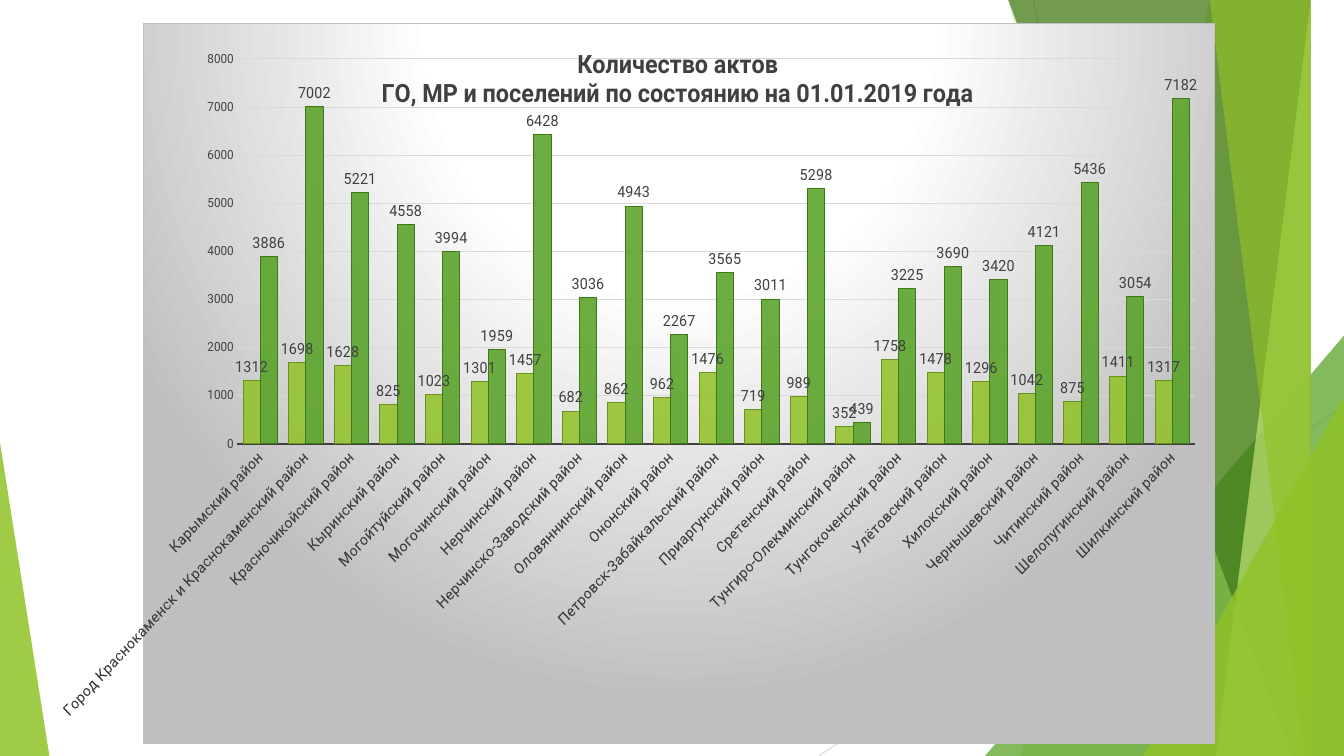
import pptx
import pptx.chart.data
import pptx.dml.color
import pptx.enum.chart
import pptx.enum.shapes
import pptx.oxml
import pptx.oxml.ns
import pptx.util

WIDTH, HEIGHT = 13.33, 7.5
TOP = -0.01
COLORS = {
    "lime": "90C226", "green": "54A021", "forest": "3F7819", "pale": "C0E474",
    "olive": "6C921D", "text": "404040", "silver": "BFBFBF", "grid": "D9D9D9",
    "white": "FFFFFF",
}
RGB = {name: pptx.dml.color.RGBColor.from_string(value) for name, value in COLORS.items()}
qn = pptx.oxml.ns.qn
Inches, Pt = pptx.util.Inches, pptx.util.Pt


def paint(fill, color, opacity):
    fill.solid()
    fill.fore_color.rgb = RGB[color]
    node = fill._xPr.find(".//" + qn("a:srgbClr"))
    pptx.oxml.parse_xml(f'<a:alpha {pptx.oxml.ns.nsdecls("a")} val="{opacity * 1000}"/>')
    node.append(pptx.oxml.parse_xml(
        f'<a:alpha {pptx.oxml.ns.nsdecls("a")} val="{opacity * 1000}"/>'))


def place(parent, index, target, **shares):
    """Give a chart part a fixed place, as shares of the chart's size."""
    for old in parent.findall(qn("c:layout")):
        parent.remove(old)
    modes = "".join(f'<c:{key}Mode val="edge"/>' for key in "xy")
    values = "".join(f'<c:{key} val="{share}"/>' for key, share in shares.items())
    parent.insert(index, pptx.oxml.parse_xml(
        f'<c:layout {pptx.oxml.ns.nsdecls("c")}><c:manualLayout>'
        f'{target}{modes}{values}</c:manualLayout></c:layout>'))


presentation = pptx.Presentation()
presentation.slide_width, presentation.slide_height = Inches(WIDTH), Inches(HEIGHT)
slide = presentation.slides.add_slide(presentation.slide_layouts[6])

# Thin background lines
for x1, y1, x2, y2, color in [(10.25, 0, 11.58, HEIGHT, "silver"),
                              (WIDTH, 4.03, 8.12, HEIGHT, "grid")]:
    line = slide.shapes.add_connector(
        pptx.enum.shapes.MSO_CONNECTOR.STRAIGHT,
        Inches(x1), Inches(y1), Inches(x2), Inches(y2))
    line.line.color.rgb = RGB[color]
    line.line.width = Pt(0.75)
    line._element.spPr.append(pptx.oxml.parse_xml(
        f'<a:effectLst {pptx.oxml.ns.nsdecls("a")}/>'))

# Green facets: bands (top x, bottom x) reach the right edge,
# triangles (left, top, width, apex) reach the bottom edge
facets = [
    ("band", (12.28, 10.04), "lime", 30),
    ("band", (10.5, 11.83), "lime", 20),
    ("triangle", (9.77, 3.33, 3.56, 1), "green", 72),
    ("band", (10.21, 12.91), "forest", 70),
    ("band", (13.03, 11.92), "pale", 70),
    ("band", (11.96, 13.18), "lime", 65),
    ("triangle", (11.34, 3.93, 1.99, 1), "lime", 80),
    ("triangle", (0, 4.39, 0.49, 0), "lime", 85),
]
for kind, geometry, color, opacity in facets:
    if kind == "band":
        top_x, bottom_x = geometry
        builder = slide.shapes.build_freeform(top_x, TOP, scale=Inches(1))
        builder.add_line_segments(
            [(WIDTH, TOP), (WIDTH, HEIGHT), (bottom_x, HEIGHT)], close=True)
        shape = builder.convert_to_shape()
    else:
        left, top, width, apex = geometry
        shape = slide.shapes.add_shape(
            pptx.enum.shapes.MSO_SHAPE.ISOSCELES_TRIANGLE,
            Inches(left), Inches(top), Inches(width), Inches(HEIGHT - top))
        shape.adjustments[0] = apex
    paint(shape.fill, color, opacity)
    shape.line.fill.background()
    shape.shadow.inherit = False

# Chart data: district, first count, second count
districts = [
    ("Карымский район", 1312, 3886),
    ("Город Краснокаменск и Краснокаменский район", 1698, 7002),
    ("Красночикойский район", 1628, 5221),
    ("Кыринский район", 825, 4558),
    ("Могойтуйский район", 1023, 3994),
    ("Могочинский район", 1301, 1959),
    ("Нерчинский район", 1457, 6428),
    ("Нерчинско-Заводский район", 682, 3036),
    ("Оловяннинский район", 862, 4943),
    ("Ононский район", 962, 2267),
    ("Петровск-Забайкальский район", 1476, 3565),
    ("Приаргунский район", 719, 3011),
    ("Сретенский район", 989, 5298),
    ("Тунгиро-Олекминский район", 352, 439),
    ("Тунгокоченский район", 1758, 3225),
    ("Улётовский район", 1478, 3690),
    ("Хилокский район", 1296, 3420),
    ("Чернышевский район", 1042, 4121),
    ("Читинский район", 875, 5436),
    ("Шелопугинский район", 1411, 3054),
    ("Шилкинский район", 1317, 7182),
]
names, first_counts, second_counts = zip(*districts)
chart_data = pptx.chart.data.CategoryChartData()
chart_data.categories = names
chart_data.add_series("Series 1", first_counts)
chart_data.add_series("Series 2", second_counts)
chart = slide.shapes.add_chart(
    pptx.enum.chart.XL_CHART_TYPE.COLUMN_CLUSTERED,
    Inches(0.59), Inches(0.23), Inches(11.46), Inches(7.15), chart_data).chart
chart.has_legend = False
chart.font.size = Pt(10)
chart.font.name = "Roboto"

# Columns and value labels
plot = chart.plots[0]
plot.gap_width, plot.overlap, plot.vary_by_categories = 65, 0, False
for series, color, edge in zip(plot.series, ("lime", "green"), ("olive", "forest")):
    paint(series.format.fill, color, 85)
    series.format.line.color.rgb = RGB[edge]
    series.format.line.width = Pt(0.75)
    labels = series.data_labels
    labels.show_value = True
    labels.position = pptx.enum.chart.XL_LABEL_POSITION.OUTSIDE_END
    labels.font.size = Pt(11)
    labels.font.name = "Roboto"
    labels.font.color.rgb = RGB["text"]

# Axes
for axis, size in [(chart.category_axis, 11), (chart.value_axis, 9)]:
    axis.major_tick_mark = axis.minor_tick_mark = pptx.enum.chart.XL_TICK_MARK.NONE
    axis.tick_labels.font.size = Pt(size)
    axis.tick_labels.font.name = "Roboto"
    axis.tick_labels.font.color.rgb = RGB["text"]
chart.category_axis.format.line.color.rgb = RGB["text"]
chart.category_axis.format.line.width = Pt(1.5)
label_body = chart.category_axis._element.find(qn("c:txPr")).find(qn("a:bodyPr"))
label_body.set("rot", str(-45 * 60000))
label_body.set("vert", "horz")
chart.value_axis.format.line.fill.background()
chart.value_axis.minimum_scale, chart.value_axis.maximum_scale = 0, 8000
chart.value_axis.major_unit = 1000
chart.value_axis.major_gridlines.format.line.color.rgb = RGB["grid"]
chart.value_axis.major_gridlines.format.line.width = Pt(0.75)

# Title over the plot
title = chart.chart_title
title.text_frame.text = "Количество актов\nГО, МР и поселений по состоянию на 01.01.2019 года"
for paragraph in title.text_frame.paragraphs:
    font = paragraph.runs[0].font
    font.size, font.bold, font.name = Pt(18), True, "Roboto"
    font.color.rgb = RGB["text"]
title._element.find(qn("c:overlay")).set("val", "1")
place(title._element, 1, "", x=0.22, y=0.03)
place(chart._chartSpace.chart.plotArea, 0, '<c:layoutTarget val="inner"/>',
      x=0.088, y=0.049, w=0.894, h=0.535)

# Radial background and border
stops = "".join(
    f'<a:gs pos="{share * 1000}"><a:srgbClr val="{COLORS[color]}"/></a:gs>'
    for share, color in [(0, "white"), (39, "white"), (100, "silver")])
chart._chartSpace.chart.addnext(pptx.oxml.parse_xml(
    f'<c:spPr {pptx.oxml.ns.nsdecls("c", "a")}><a:gradFill><a:gsLst>{stops}</a:gsLst>'
    '<a:path path="circle"><a:fillToRect l="50000" t="-80000" r="50000" b="180000"/></a:path>'
    f'</a:gradFill><a:ln w="{Pt(0.75)}"><a:solidFill><a:srgbClr val="{COLORS["silver"]}"/>'
    '</a:solidFill></a:ln></c:spPr>'))

presentation.save("out.pptx")
